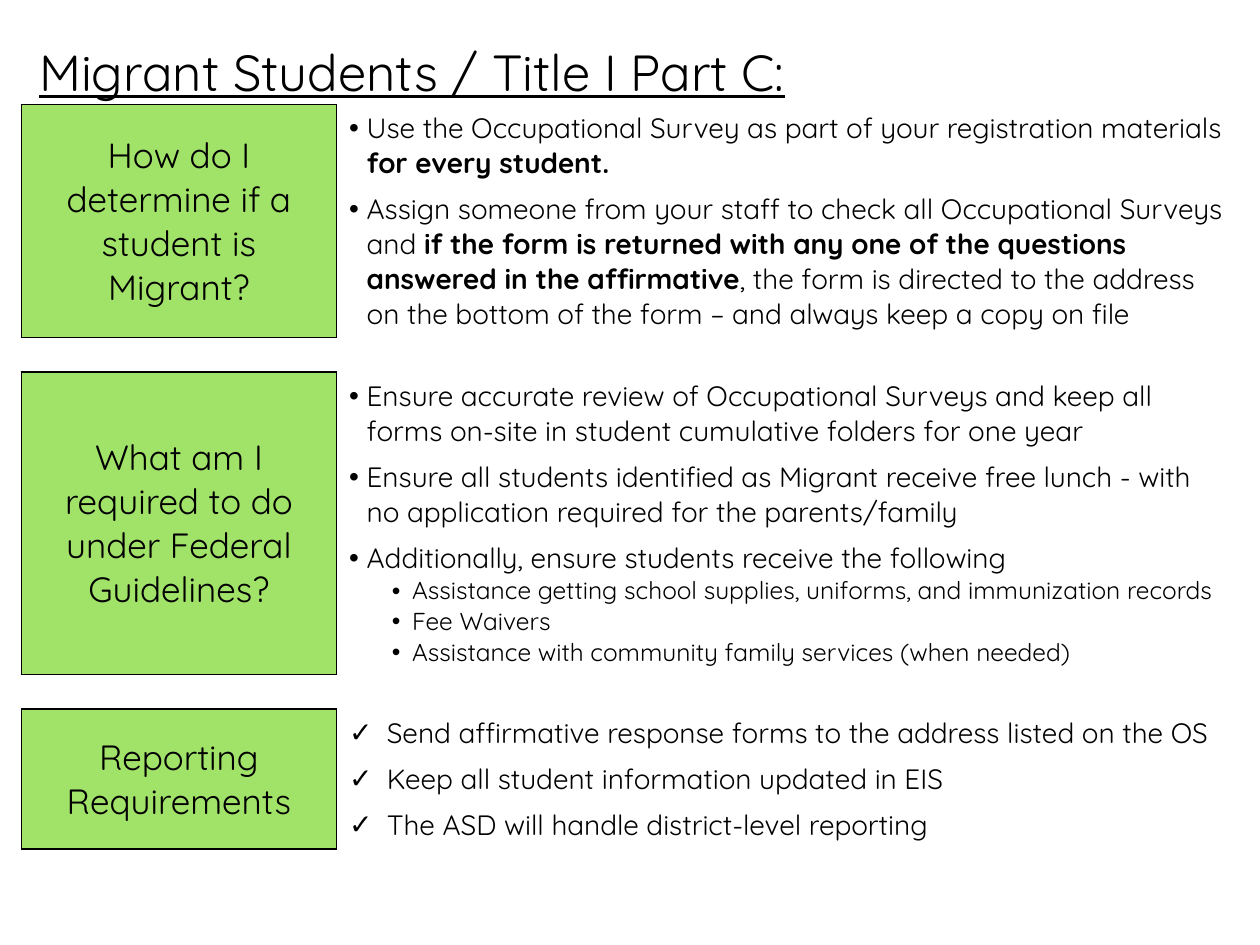
from lxml import etree
from pptx import Presentation
from pptx import util as u
from pptx.dml.color import RGBColor
from pptx.enum import text
from pptx.oxml import ns

BLACK, GREEN = "000000", "A1E269"
# bullet, left margin, first-line indent, size, space before
POINT = ("•", 0.14, -0.16, 16, 6.4)
DETAIL = ("•", 0.5, -0.16, 14, 0)
CHECK = ("✓", 0.3, -0.31, 16, 6.4)

# question, row height, answers; text between ** marks is bold
SECTIONS = [
    ("How do I determine if a student is Migrant?", 1.85, [
        (POINT, "Use the Occupational Survey as part of your registration materials "
                "**for every student.**"),
        (POINT, "Assign someone from your staff to check all Occupational Surveys and "
                "**if the form is returned with any one of the questions answered in "
                "the affirmative**, the form is directed to the address on the bottom "
                "of the form – and always keep a copy on file"),
    ]),
    ("What am I required to do under Federal Guidelines?", 2.4, [
        (POINT, "Ensure accurate review of Occupational Surveys and keep all forms "
                "on-site in student cumulative folders for one year"),
        (POINT, "Ensure all students identified as Migrant receive free lunch - with "
                "no application required for the parents/family"),
        (POINT, "Additionally, ensure students receive the following"),
        (DETAIL, "Assistance getting school supplies, uniforms, and immunization records"),
        (DETAIL, "Fee Waivers"),
        (DETAIL, "Assistance with community family services (when needed)"),
    ]),
    ("Reporting Requirements", 1.11, [
        (CHECK, "Send affirmative response forms to the address listed on the OS"),
        (CHECK, "Keep all student information updated in EIS"),
        (CHECK, "The ASD will handle district-level reporting"),
    ]),
]
GAP = 0.27


def color(value):
    return RGBColor.from_string(value)


def add_xml(parent, tag, **attributes):
    return etree.SubElement(parent, ns.qn(tag), attributes)


class SlideBuilder:
    font_name = "Quicksand"

    def __init__(self, deck):
        self.slide = deck.slides.add_slide(deck.slide_layouts[5])

    def style(self, font, size):
        font.name = self.font_name
        font.size = u.Pt(size)
        font.color.rgb = color(BLACK)

    def title(self, wording, left, top, width, height):
        box = self.slide.shapes.title
        box.left, box.top = u.Inches(left), u.Inches(top)
        box.width, box.height = u.Inches(width), u.Inches(height)
        frame = box.text_frame
        frame.text = wording
        frame.vertical_anchor = text.MSO_ANCHOR.MIDDLE
        frame.margin_left = frame.margin_top = frame.margin_bottom = 0
        frame.margin_right = u.Inches(0.07)
        para = frame.paragraphs[0]
        para.alignment = text.PP_ALIGN.LEFT
        self.style(para.font, 29)
        para.font.underline = True

    def table(self, left, top, widths, heights):
        frame = self.slide.shapes.add_table(
            len(heights), len(widths), u.Inches(left), u.Inches(top),
            u.Inches(sum(widths)), u.Inches(sum(heights)))
        table = frame.table
        table.first_row = table.horz_banding = False
        for column, width in zip(table.columns, widths):
            column.width = u.Inches(width)
        for row, height in zip(table.rows, heights):
            row.height = u.Inches(height)
        return table

    def cell_look(self, cell, sides, fill=None):
        """Draw black borders on the given sides (of LRTB) and fill the cell."""
        properties = cell._tc.get_or_add_tcPr()
        for side in "LRTB":
            line = add_xml(properties, f"a:ln{side}", w=str(u.Pt(1)))
            if side in sides:
                paint = add_xml(line, "a:solidFill")
                add_xml(paint, "a:srgbClr", val=BLACK)
            else:
                add_xml(line, "a:noFill")
        if fill:
            cell.fill.solid()
            cell.fill.fore_color.rgb = color(fill)
        else:
            cell.fill.background()

    def question(self, cell, wording):
        self.cell_look(cell, "LRTB", GREEN)
        cell.vertical_anchor = text.MSO_ANCHOR.MIDDLE
        cell.text = wording
        para = cell.text_frame.paragraphs[0]
        para.alignment = text.PP_ALIGN.CENTER
        self.style(para.font, 20)

    def answers(self, cell, items):
        self.cell_look(cell, "L")
        frame = cell.text_frame
        for index, (kind, wording) in enumerate(items):
            para = frame.add_paragraph() if index else frame.paragraphs[0]
            self.bullet(para, kind, wording, first=index == 0)

    def bullet(self, para, kind, wording, first):
        mark, margin, indent, size, space = kind
        properties = para._p.get_or_add_pPr()
        properties.set("marL", str(u.Inches(margin)))
        properties.set("indent", str(u.Inches(indent)))
        paint = add_xml(properties, "a:buClr")
        add_xml(paint, "a:srgbClr", val=BLACK)
        add_xml(properties, "a:buFont", typeface="Arial")
        add_xml(properties, "a:buChar", char=mark)
        para.space_before = u.Pt(0 if first else space)
        self.style(para.font, size)
        for position, part in enumerate(wording.split("**")):
            if part:
                span = para.add_run()
                span.text = part
                if position % 2:
                    span.font.bold = True

    def gap(self, cell, sides):
        """Keep an empty cell low by giving it a small text size."""
        self.cell_look(cell, sides)
        para = cell.text_frame.paragraphs[0]
        self.style(para.font, 10)
        add_xml(para._p, "a:endParaRPr", sz="1000")


def main():
    deck = Presentation()
    deck.slide_width, deck.slide_height = u.Inches(10), u.Inches(7.5)
    page = SlideBuilder(deck)
    page.title("Migrant Students / Title I Part C:", 0.31, 0.11, 9.66, 0.91)

    heights = [GAP] * (2 * len(SECTIONS) - 1)
    heights[::2] = [height for _, height, _ in SECTIONS]
    table = page.table(0.17, 0.83, [2.5, 7.17], heights)
    for index, (wording, _, items) in enumerate(SECTIONS):
        row = 2 * index
        page.question(table.cell(row, 0), wording)
        page.answers(table.cell(row, 1), items)
        if index:
            page.gap(table.cell(row - 1, 0), "TB")
            page.gap(table.cell(row - 1, 1), "")
    deck.save("out.pptx")


if __name__ == "__main__":
    main()
